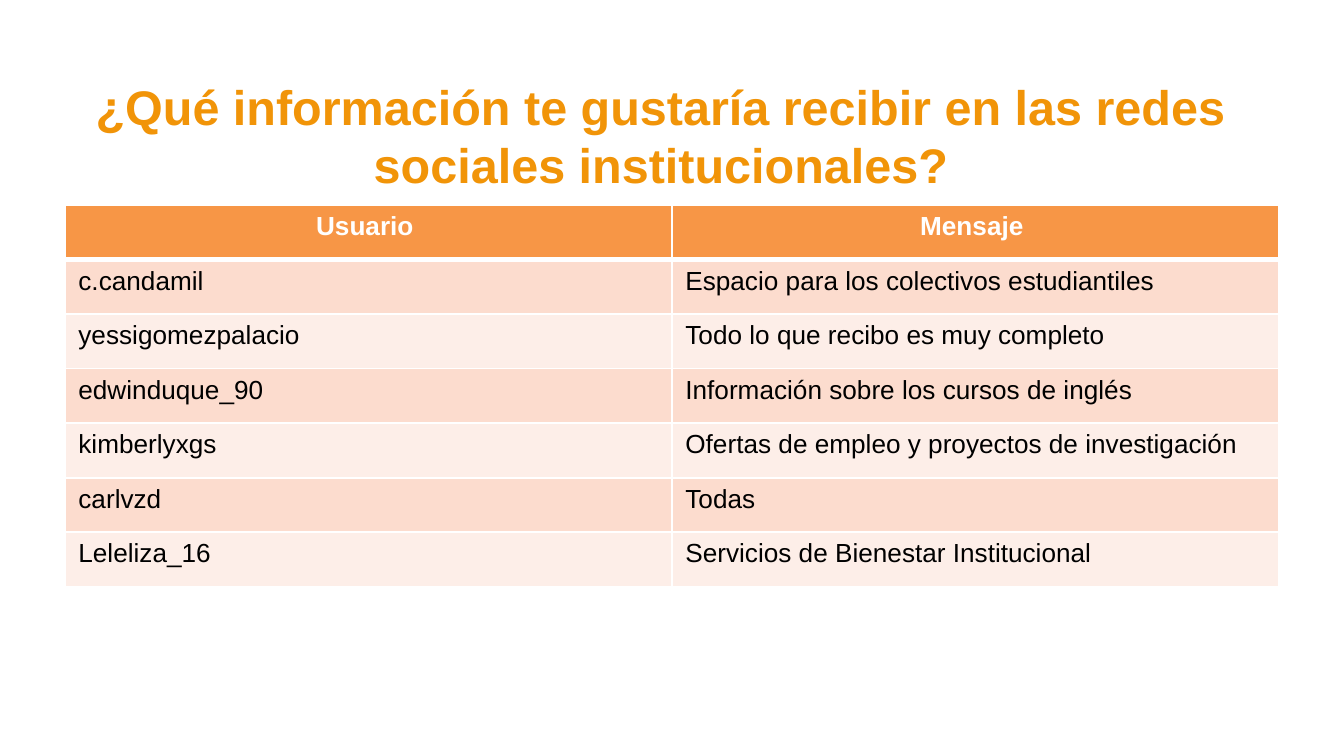
import pptx
import pptx.dml.color
import pptx.enum.text
import pptx.oxml
import pptx.oxml.ns
import pptx.util

EMU_PER_PX = 914400 / 134.4
COLORS = {
    "title": "F19408",
    "header": "F79646",
    "odd_row": "FCDCCE",
    "even_row": "FDEEE8",
    "white": "FFFFFF",
    "text": "000000",
}
ROWS = [
    ("Usuario ", "Mensaje "),
    ("c.candamil", "Espacio para los colectivos estudiantiles"),
    ("yessigomezpalacio", "Todo lo que recibo es muy completo"),
    ("edwinduque_90", "Información sobre los cursos de inglés"),
    ("kimberlyxgs", "Ofertas de empleo y proyectos de investigación"),
    ("carlvzd", "Todas"),
    ("Leleliza_16", "Servicios de Bienestar Institucional"),
]


def px(*values):
    return [pptx.util.Emu(round(value * EMU_PER_PX)) for value in values]


def write_text(text_frame, text, size=14, color="text", bold=False, centered=False):
    paragraph = text_frame.paragraphs[0]
    alignment = pptx.enum.text.PP_ALIGN
    paragraph.alignment = alignment.CENTER if centered else alignment.LEFT
    run = paragraph.add_run()
    run.text = text
    run.font.name = "Arial"
    run.font.size = pptx.util.Pt(size)
    run.font.bold = bold
    run.font.color.rgb = pptx.dml.color.RGBColor.from_string(COLORS[color])


presentation = pptx.Presentation()
presentation.slide_width, presentation.slide_height = px(1344, 756)
slide = presentation.slides.add_slide(presentation.slide_layouts[6])

# Title
title = slide.shapes.add_textbox(*px(65, 66, 1193, 138))
title.text_frame.word_wrap = True
title.text_frame.vertical_anchor = pptx.enum.text.MSO_ANCHOR.MIDDLE
write_text(
    title.text_frame,
    "¿Qué información te gustaría recibir en las redes sociales institucionales?",
    size=26, color="title", bold=True, centered=True,
)

# Table of users and messages
table = slide.shapes.add_table(len(ROWS), 2, *px(65, 205, 1214, 382)).table
for row_index, row in enumerate(ROWS):
    is_header = row_index == 0
    fill = "header" if is_header else ("even_row", "odd_row")[row_index % 2]
    for column_index, text in enumerate(row):
        cell = table.cell(row_index, column_index)
        cell.fill.solid()
        cell.fill.fore_color.rgb = pptx.dml.color.RGBColor.from_string(COLORS[fill])
        write_text(
            cell.text_frame, text, color="white" if is_header else "text",
            bold=is_header, centered=is_header,
        )

        # White cell borders, thicker on the line below the header
        properties = cell._tc.get_or_add_tcPr()
        for position, side in enumerate(("lnL", "lnR", "lnT", "lnB")):
            below_header = (row_index, side) in ((0, "lnB"), (1, "lnT"))
            width = pptx.util.Pt(3 if below_header else 1)
            border = pptx.oxml.parse_xml(
                f'<a:{side} {pptx.oxml.ns.nsdecls("a")} w="{width}"><a:solidFill>'
                f'<a:srgbClr val="{COLORS["white"]}"/></a:solidFill></a:{side}>'
            )
            properties.insert(position, border)

presentation.save("out.pptx")
